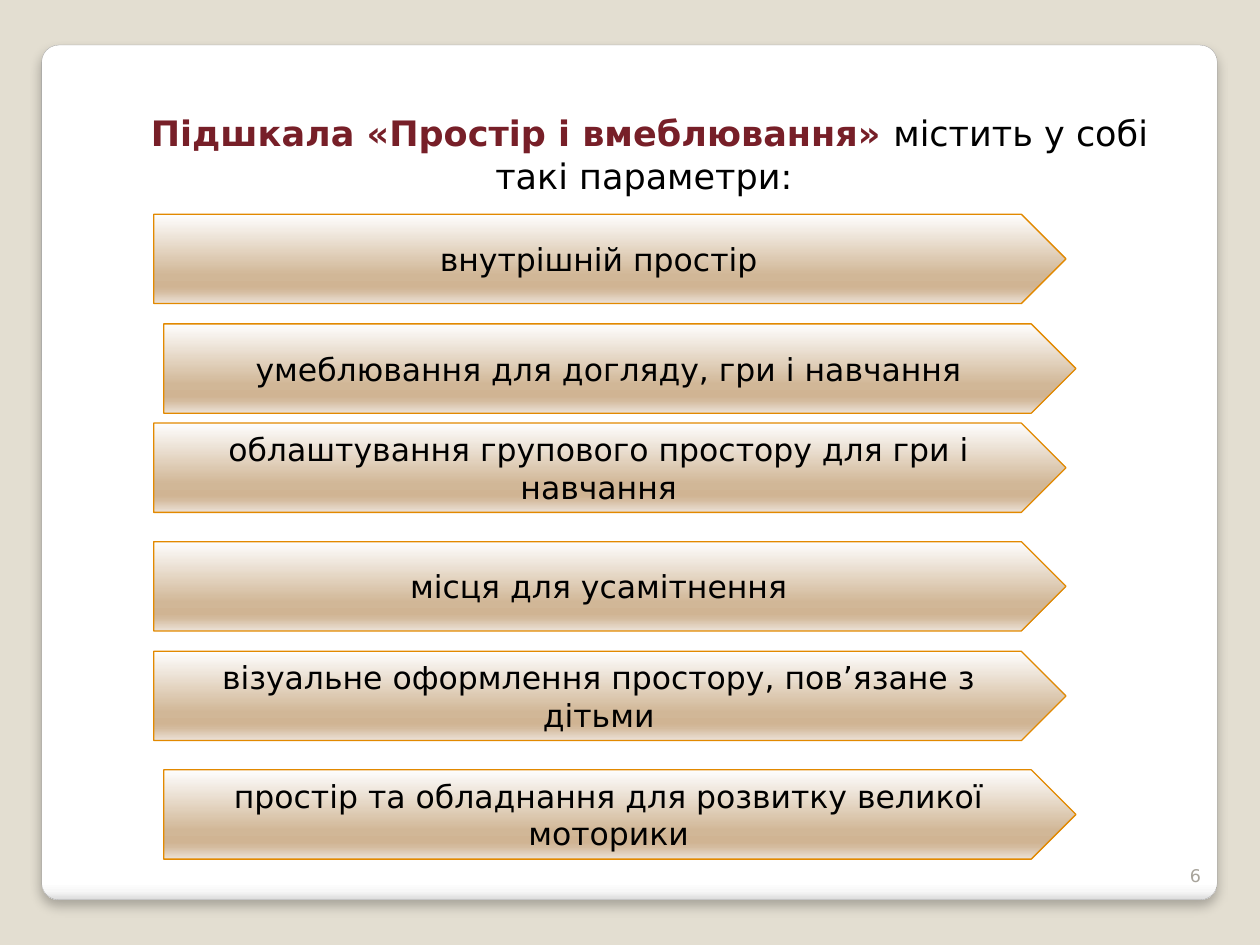
from dataclasses import dataclass

from lxml.etree import SubElement
from pptx import Presentation
from pptx.dml.color import RGBColor
from pptx.enum.shapes import MSO_SHAPE as Preset
from pptx.enum.text import MSO_ANCHOR as Anchor, MSO_AUTO_SIZE as AutoSize, PP_ALIGN as Align
from pptx.oxml.ns import qn
from pptx.shapes.autoshape import Shape
from pptx.slide import Slide
from pptx.util import Cm, Pt

FONT = "DejaVu Sans"
BACKGROUND = RGBColor(0xE3, 0xDE, 0xD1)
BLACK = RGBColor(0x00, 0x00, 0x00)
MAROON = RGBColor(0x77, 0x1F, 0x28)
ORANGE = RGBColor(0xE2, 0x89, 0x00)
GREY = RGBColor(0xA4, 0xA4, 0xA4)
NUMBER_GREY = RGBColor(0xA8, 0xA4, 0x9B)
WHITE = RGBColor(0xFF, 0xFF, 0xFF)

CARD_STOPS = [
    (0, WHITE),
    (98, WHITE),
    (99, RGBColor(0xF7, 0xF7, 0xF7)),
    (100, RGBColor(0xDA, 0xDA, 0xDA)),
]
ARROW_STOPS = [
    (0, RGBColor(0xFE, 0xFE, 0xFE)),
    (68, RGBColor(0xD1, 0xB7, 0x97)),
    (81, RGBColor(0xD0, 0xB4, 0x93)),
    (86, RGBColor(0xD4, 0xBB, 0x9E)),
    (100, RGBColor(0xEC, 0xE2, 0xD8)),
]

ARROW_LEFT = 3.1
ARROW_INDENT = 0.2
ARROW_WIDTH = 18.39
ARROW_HEIGHT = 1.8


@dataclass
class Parameter:
    text: str
    top: float
    indented: bool = False


PARAMETERS = [
    Parameter("внутрішній простір", 4.32),
    Parameter("умеблювання для догляду, гри і навчання", 6.53, indented=True),
    Parameter("облаштування групового простору для гри і навчання", 8.53),
    Parameter("місця для усамітнення", 10.92),
    Parameter("візуальне оформлення простору, пов’язане з дітьми", 13.13),
    Parameter("простір та обладнання для розвитку великої моторики", 15.52, indented=True),
]


def write_text(shape: Shape, text: str, *, size: float, color: RGBColor = BLACK,
               bold: bool = False, align: Align = Align.CENTER,
               anchor: Anchor = Anchor.MIDDLE) -> None:
    frame = shape.text_frame
    frame.word_wrap = True
    frame.auto_size = AutoSize.NONE
    frame.vertical_anchor = anchor
    paragraph = frame.paragraphs[0]
    paragraph.alignment = align
    run = paragraph.add_run()
    run.text = text
    run.font.name = FONT
    run.font.size = Pt(size)
    run.font.bold = bold
    run.font.color.rgb = color


def fill_gradient(shape: Shape, stops: list[tuple[int, RGBColor]]) -> None:
    shape.fill.gradient()
    shape.fill.gradient_angle = 270
    stop_list = shape._element.spPr.find(qn("a:gradFill")).find(qn("a:gsLst"))
    stop_list.clear()
    for position, color in stops:
        stop = SubElement(stop_list, qn("a:gs"), pos=str(position * 1000))
        SubElement(stop, qn("a:srgbClr"), val=str(color))


def add_panel(slide: Slide, preset: Preset, left: float, top: float, width: float,
              height: float, stops: list[tuple[int, RGBColor]], line_color: RGBColor,
              line_width: float) -> Shape:
    shape = slide.shapes.add_shape(preset, Cm(left), Cm(top), Cm(width), Cm(height))
    shape.shadow.inherit = False
    fill_gradient(shape, stops)
    shape.line.color.rgb = line_color
    shape.line.width = Pt(line_width)
    return shape


def add_shadow(shape: Shape) -> None:
    effects = shape._element.spPr.find(qn("a:effectLst"))
    shadow = SubElement(effects, qn("a:outerShdw"), blurRad=str(Pt(6)), dist=str(Pt(4)),
                        dir="5400000", algn="t", rotWithShape="0")
    color = SubElement(shadow, qn("a:srgbClr"), val=str(BLACK))
    SubElement(color, qn("a:alpha"), val="25000")


def add_card(slide: Slide) -> None:
    card = add_panel(slide, Preset.ROUNDED_RECTANGLE, 0.84, 0.91, 23.7, 17.23,
                     CARD_STOPS, GREY, 0.16)
    card.adjustments[0] = 0.02
    add_shadow(card)
    slide.shapes.title._element.addprevious(card._element)


def add_title(slide: Slide) -> None:
    title = slide.shapes.title
    title.left, title.top, title.width, title.height = Cm(2.49), Cm(2.13), Cm(21.21), Cm(2.82)
    write_text(title, "Підшкала «Простір і вмеблювання» ", size=20, color=MAROON,
               bold=True, anchor=Anchor.TOP)
    write_text(title, "містить у собі такі параметри: ", size=20, anchor=Anchor.TOP)


def add_parameter(slide: Slide, parameter: Parameter) -> None:
    left = ARROW_LEFT + ARROW_INDENT * parameter.indented
    arrow = add_panel(slide, Preset.PENTAGON, left, parameter.top, ARROW_WIDTH,
                      ARROW_HEIGHT, ARROW_STOPS, ORANGE, 0.75)
    write_text(arrow, parameter.text, size=18)


def add_slide_number(slide: Slide) -> None:
    number = slide.shapes.add_textbox(Cm(23.19), Cm(16.97), Cm(1.27), Cm(1.02))
    write_text(number, "6", size=10, color=NUMBER_GREY, align=Align.RIGHT,
               anchor=Anchor.BOTTOM)


def main() -> None:
    presentation = Presentation()
    presentation.slide_width = Cm(25.4)
    presentation.slide_height = Cm(19.05)
    slide = presentation.slides.add_slide(presentation.slide_layouts.get_by_name("Title Only"))
    slide.background.fill.solid()
    slide.background.fill.fore_color.rgb = BACKGROUND
    add_card(slide)
    add_title(slide)
    for parameter in PARAMETERS:
        add_parameter(slide, parameter)
    add_slide_number(slide)
    presentation.save("out.pptx")


if __name__ == "__main__":
    main()
